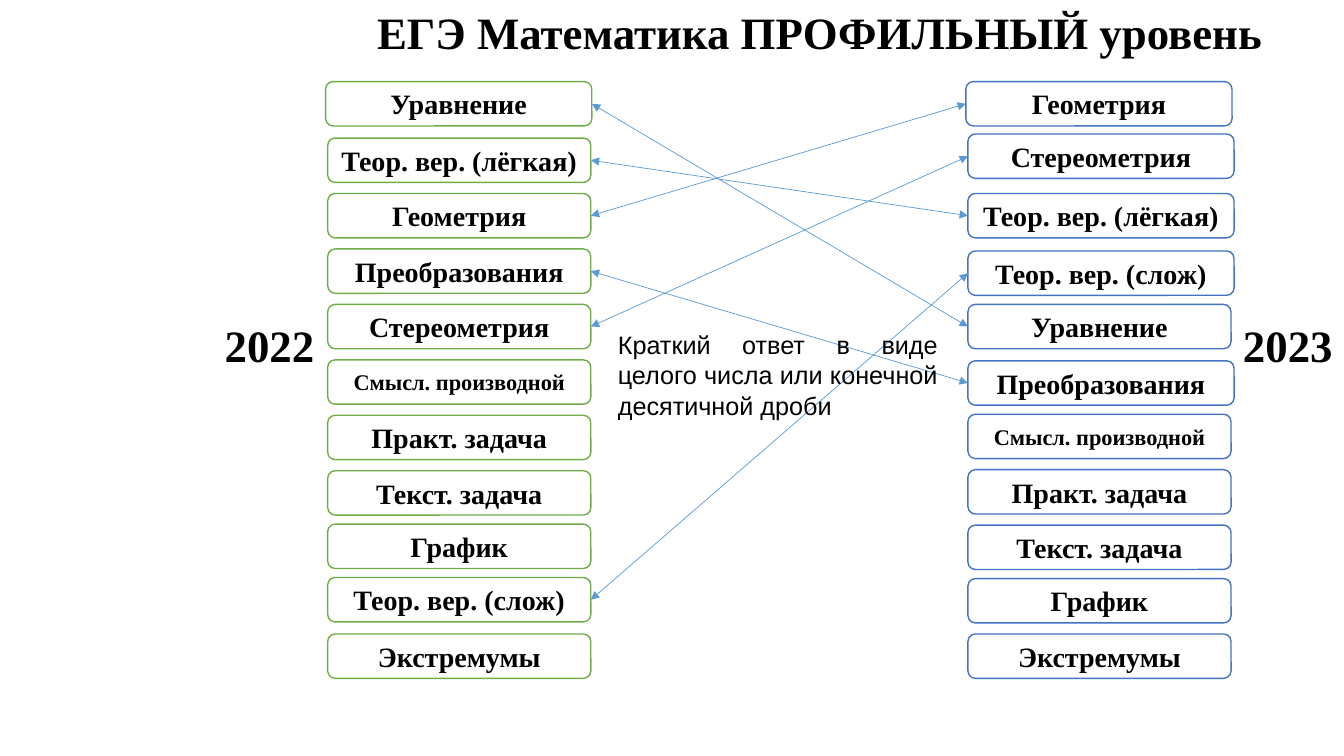
import pptx
import pptx.util
import pptx.dml.color
import pptx.enum.shapes
import pptx.enum.text
import pptx.oxml

Inches, Pt = pptx.util.Inches, pptx.util.Pt
RGB = pptx.dml.color.RGBColor
ALIGN = pptx.enum.text.PP_ALIGN
ANCHOR = pptx.enum.text.MSO_ANCHOR
FIT = pptx.enum.text.MSO_AUTO_SIZE.SHAPE_TO_FIT_TEXT
CARD = pptx.enum.shapes.MSO_SHAPE.FLOWCHART_ALTERNATE_PROCESS
LINE = pptx.enum.shapes.MSO_CONNECTOR.STRAIGHT

BLACK = RGB(0x00, 0x00, 0x00)
WHITE = RGB(0xFF, 0xFF, 0xFF)
GREEN = RGB(0x70, 0xAD, 0x47)
BLUE = RGB(0x44, 0x72, 0xC4)
SKY = RGB(0x5B, 0x9B, 0xD5)
SERIF, SANS = "Times New Roman", "Arial"

TITLE = "ЕГЭ Математика ПРОФИЛЬНЫЙ уровень"
NOTE = "Краткий ответ в виде целого числа или конечной десятичной дроби"
SMALL = "Смысл. производной"
OLD = ["Уравнение", "Теор. вер. (лёгкая)", "Геометрия", "Преобразования",
       "Стереометрия", SMALL, "Практ. задача", "Текст. задача",
       "График", "Теор. вер. (слож)", "Экстремумы"]
NEW = ["Геометрия", "Стереометрия", "Теор. вер. (лёгкая)", "Теор. вер. (слож)",
       "Уравнение", "Преобразования", SMALL, "Практ. задача",
       "Текст. задача", "График", "Экстремумы"]
MOVED = ["Уравнение", "Теор. вер. (лёгкая)", "Геометрия",
         "Преобразования", "Стереометрия", "Теор. вер. (слож)"]

TOP, PITCH, TALL = 0.82, 0.55, 0.44
SLIM, WIDE = 2.61, 2.64
OLD_X, NEW_X = 3.25, 9.6
OLD_SHIFT = {0: -0.01, 8: -0.02, 9: -0.04, 10: -0.03}
NEW_SHIFT = {0: -0.01, 1: -0.04, 3: 0.02, 5: 0.01, 6: -0.01,
             7: -0.01, 8: -0.01, 9: -0.03, 10: -0.03}
OLD_WIDE, NEW_WIDE = {0}, {0, 1, 2, 3, 5}


def write(shape, text, size, face, bold, align):
    frame = shape.text_frame
    frame.text = text
    para = frame.paragraphs[0]
    para.alignment = align
    font = para.runs[0].font
    font.size, font.name, font.bold = Pt(size), face, bold
    font.color.rgb = BLACK


def label(slide, box, text, size, face, bold, align, wrap):
    shape = slide.shapes.add_textbox(*map(Inches, box))
    write(shape, text, size, face, bold, align)
    shape.text_frame.word_wrap = wrap
    shape.text_frame.auto_size = FIT


def column(slide, names, left, shift, wide, color):
    cards = {}
    for row, name in enumerate(names):
        x = left - 0.02 if row == 0 else left
        y = TOP + row * PITCH + shift.get(row, 0)
        width = WIDE if row in wide else SLIM
        card = slide.shapes.add_shape(CARD, *map(Inches, (x, y, width, TALL)))
        card.shadow.inherit = False
        card.fill.solid()
        card.fill.fore_color.rgb = WHITE
        card.line.color.rgb = color
        card.line.width = Pt(1)
        write(card, name, 16 if name == SMALL else 20, SERIF, True, ALIGN.CENTER)
        card.text_frame.vertical_anchor = ANCHOR.MIDDLE
        card.text_frame.word_wrap = True
        cards[name] = card
    return cards


def arrow(slide, start, end):
    link = slide.shapes.add_connector(LINE, 0, 0, 0, 0)
    link.begin_connect(start, 3)
    link.end_connect(end, 1)
    link.line.color.rgb = SKY
    link.line.width = Pt(0.5)
    stroke = link.line._get_or_add_ln()
    for tag in ("a:headEnd", "a:tailEnd"):
        tip = pptx.oxml.xmlchemy.OxmlElement(tag)
        tip.set("type", "triangle")
        stroke.append(tip)
    link._element.spPr.append(pptx.oxml.xmlchemy.OxmlElement("a:effectLst"))


def main():
    deck = pptx.Presentation()
    deck.slide_width, deck.slide_height = Inches(13.33), Inches(7.5)
    slide = deck.slides.add_slide(deck.slide_layouts[5])

    title = slide.shapes.title
    title.left, title.top, title.width, title.height = map(
        Inches, (3.64, 0, 9.06, 0.64))
    write(title, TITLE, 32, SERIF, True, ALIGN.LEFT)
    title.text_frame.vertical_anchor = ANCHOR.TOP
    title.text_frame.word_wrap = False
    title.text_frame.auto_size = FIT

    old = column(slide, OLD, OLD_X, OLD_SHIFT, OLD_WIDE, GREEN)
    new = column(slide, NEW, NEW_X, NEW_SHIFT, NEW_WIDE, BLUE)
    for year, x in (("2022", 2.13), ("2023", 12.23)):
        label(slide, (x, 3.1, 1.1, 0.64), year, 32, SERIF, True, ALIGN.LEFT, False)
    for name in MOVED:
        arrow(slide, old[name], new[name])
    label(slide, (6.03, 3.22, 3.37, 1.01), NOTE, 18, SANS, False, ALIGN.JUSTIFY, True)

    deck.save("out.pptx")


if __name__ == "__main__":
    main()
